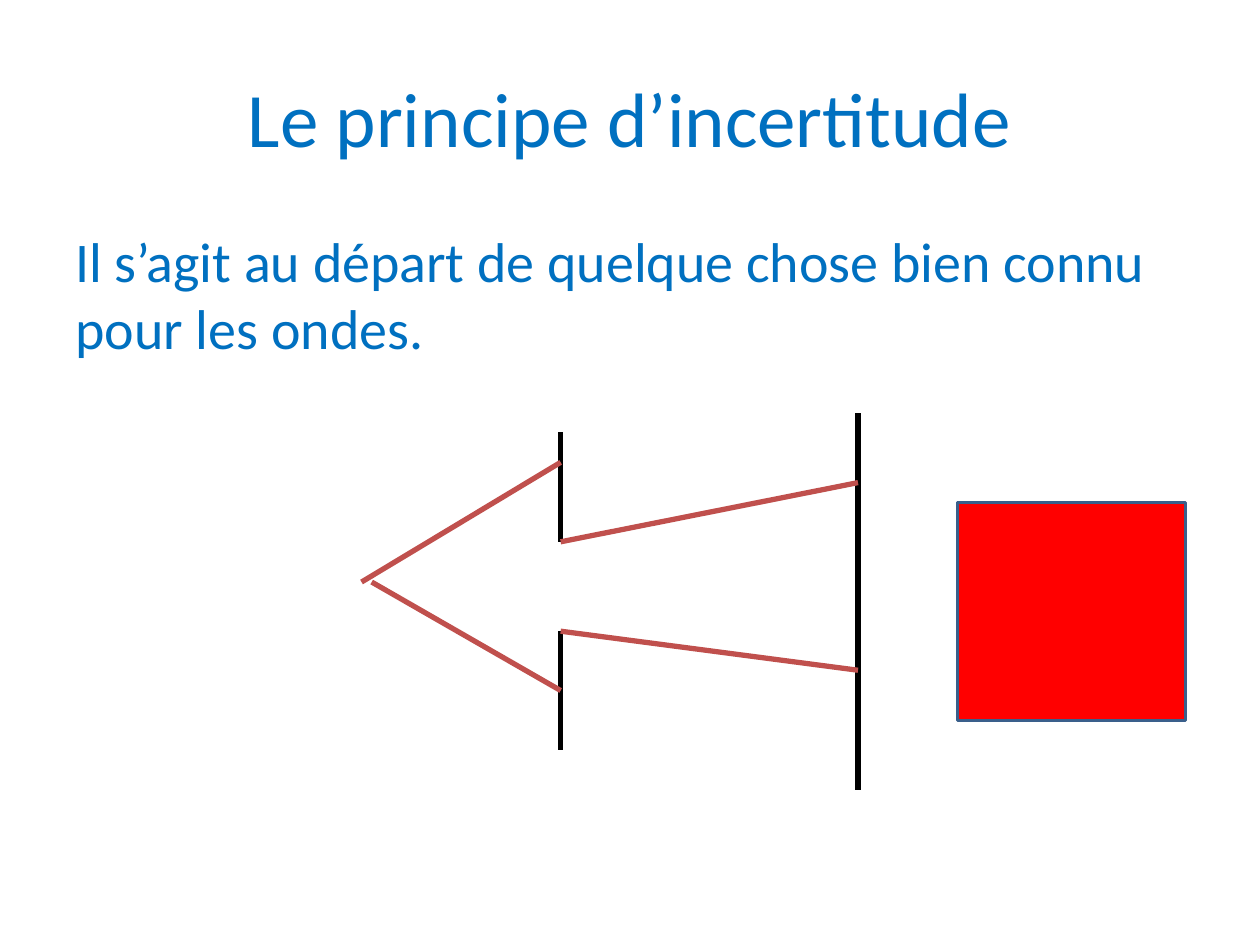
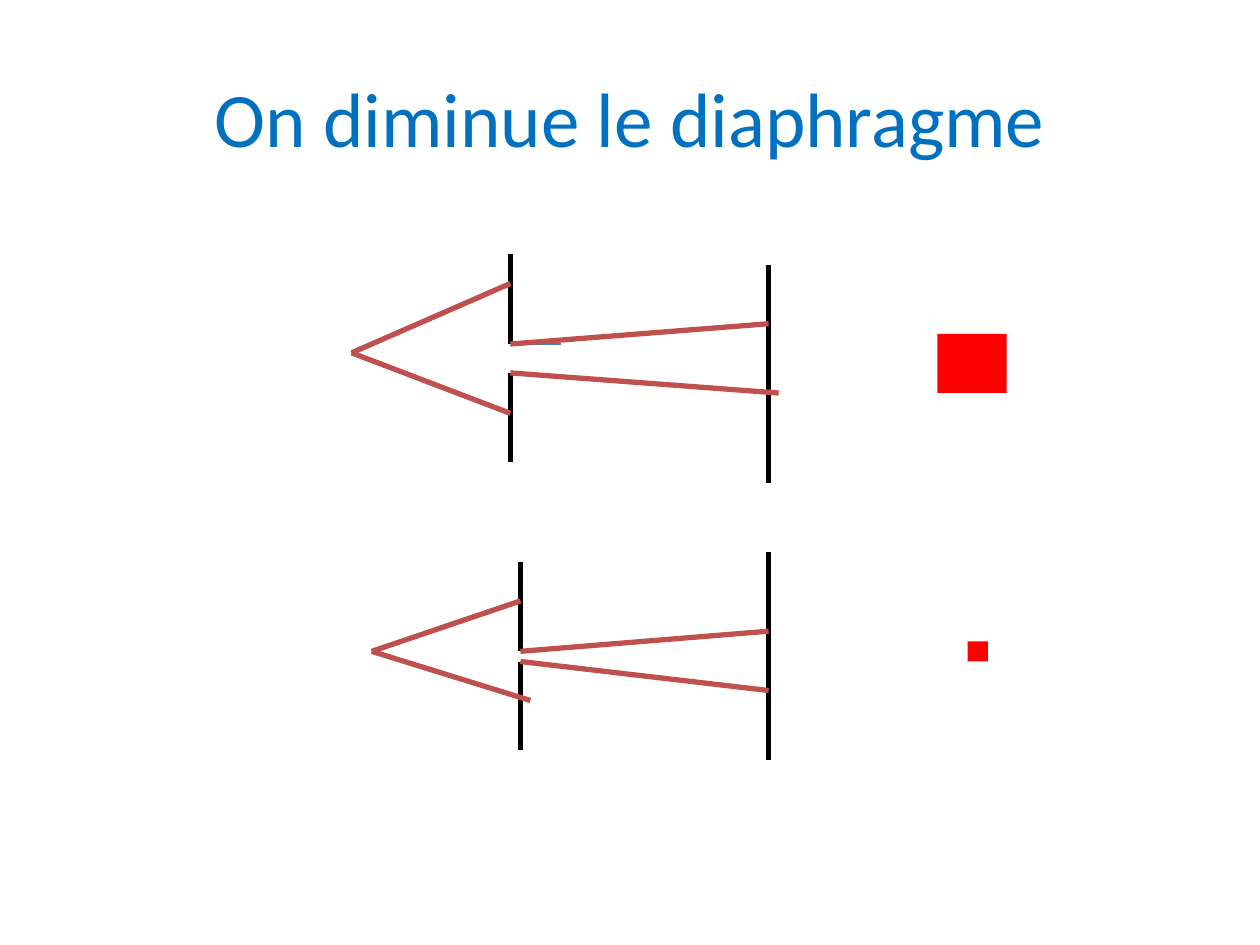
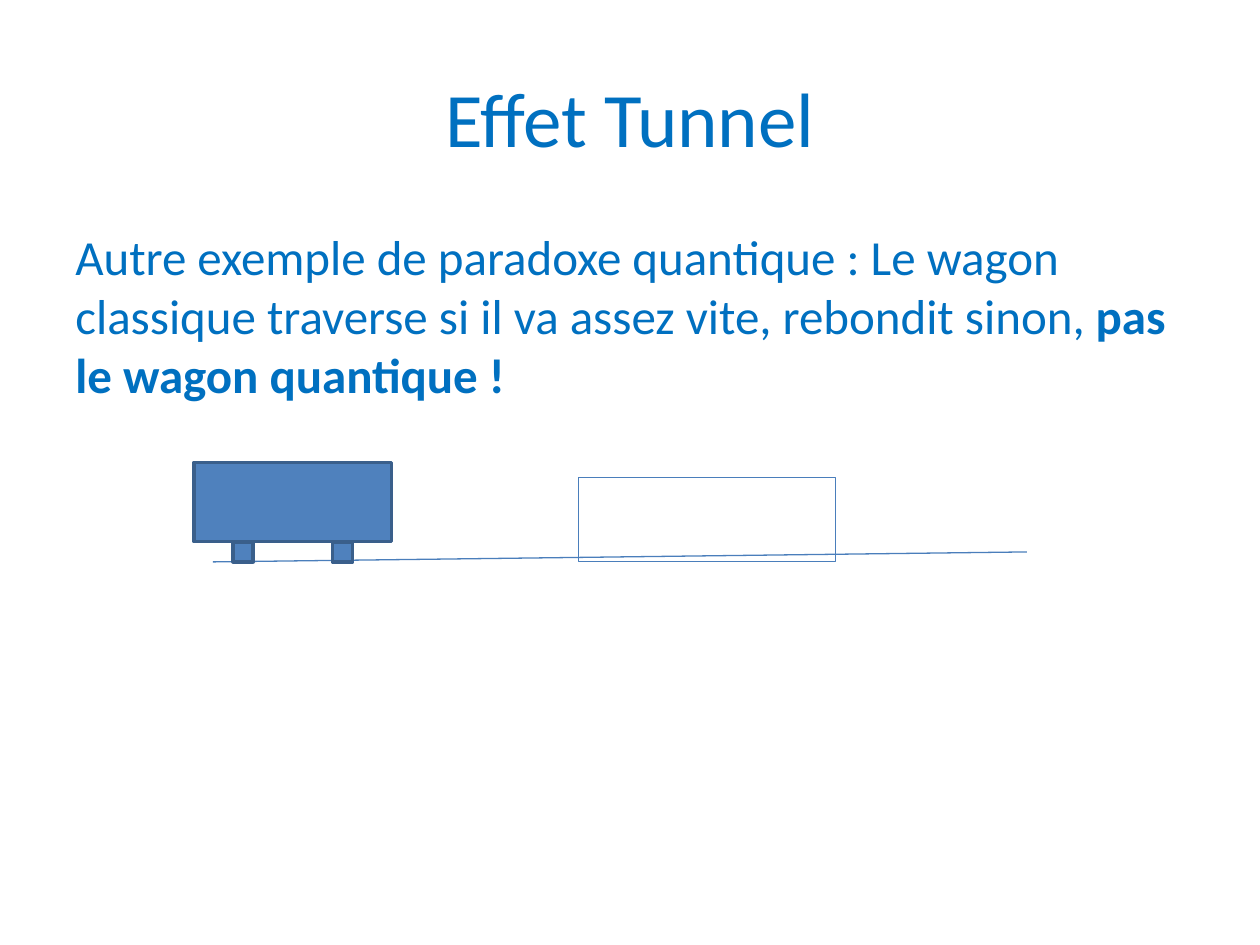
"""Build three slides on the uncertainty principle and the tunnel effect."""
from dataclasses import dataclass

from lxml import etree
from pptx import Presentation
from pptx.dml.color import RGBColor
from pptx.enum.shapes import MSO_CONNECTOR, MSO_SHAPE
from pptx.enum.text import MSO_ANCHOR, PP_ALIGN
from pptx.oxml.ns import qn
from pptx.util import Pt

STRAIGHT = MSO_CONNECTOR.STRAIGHT
RECTANGLE = MSO_SHAPE.RECTANGLE
MIDDLE, TOP = MSO_ANCHOR.MIDDLE, MSO_ANCHOR.TOP
CENTER, LEFT = PP_ALIGN.CENTER, PP_ALIGN.LEFT


@dataclass(frozen=True)
class Theme:
    """Shared colours, font and sizes."""
    font: str = "Calibri"
    title_size: int = 44
    text: RGBColor = RGBColor.from_string("0070C0")
    wall: RGBColor = RGBColor.from_string("000000")
    ray: RGBColor = RGBColor.from_string("C0504D")
    spot: RGBColor = RGBColor.from_string("FF0000")
    wagon: RGBColor = RGBColor.from_string("4F81BD")
    edge: RGBColor = RGBColor.from_string("3A5F8B")
    track: RGBColor = RGBColor.from_string("4A7EBB")
    thick: float = 3
    medium: float = 2
    thin: float = 0.75


theme = Theme()


def add_line(page, start, end, color, width):
    """Draw a straight line between two points."""
    line = page.shapes.add_connector(STRAIGHT, *map(Pt, start + end))
    line.line.color.rgb = color
    line.line.width = Pt(width)
    etree.SubElement(line._element.spPr, qn("a:effectLst"))


def add_rectangle(page, frame, fill=None, color=None, width=theme.medium):
    """Draw a rectangle with an optional fill and outline."""
    box = page.shapes.add_shape(RECTANGLE, *map(Pt, frame))
    box.shadow.inherit = False
    if fill is None:
        box.fill.background()
    else:
        box.fill.solid()
        box.fill.fore_color.rgb = fill
    if color is None:
        box.line.fill.background()
    else:
        box.line.color.rgb = color
        box.line.width = Pt(width)


deck = Presentation()
deck.slide_width, deck.slide_height = Pt(720), Pt(540)
blank = deck.slide_layouts[6]

contents = [
    ("Le principe d’incertitude", 32,
     ["Il s’agit au départ de quelque chose bien connu pour les ondes."]),
    ("On diminue le diaphragme", 0, []),
    ("Effet Tunnel", 28,
     ["Autre exemple de paradoxe quantique : Le wagon classique traverse "
      "si il va assez vite, rebondit sinon, ", "pas le wagon quantique !"]),
]

for title, body_size, body in contents:
    page = deck.slides.add_slide(blank)
    blocks = [([title], theme.title_size, 21.6, 90, MIDDLE, CENTER)]
    if body:
        blocks.append((body, body_size, 126, 356.4, TOP, LEFT))
    for spans, size, top, height, anchor, alignment in blocks:
        box = page.shapes.add_textbox(Pt(36), Pt(top), Pt(648), Pt(height))
        box.text_frame.word_wrap = True
        box.text_frame.vertical_anchor = anchor
        para = box.text_frame.paragraphs[0]
        para.alignment = alignment
        for index, words in enumerate(spans):
            span = para.add_run()
            span.text = words
            span.font.name = theme.font
            span.font.size = Pt(size)
            span.font.bold = index > 0
            span.font.color.rgb = theme.text

wide_page, narrow_page, tunnel_page = deck.slides

add_line(narrow_page, (303.1, 196.6), (320.4, 196.6), theme.track, theme.thin)

# page, slit x, slit wall heights, screen, incoming rays, outgoing ends, spot, spot outline
diagrams = [
    (wide_page, 320.4, (247, 309.6, 360.7, 428.4), (490.3, 236.2, 451.4),
     [((206.6, 332.6), (320.4, 264.2)), ((212.4, 332.6), (320.4, 394.6))],
     [(490.3, 275.8), (490.3, 383)], (547.2, 287.3, 130.3, 124.6), theme.edge),
    (narrow_page, 291.6, (145.4, 196.6, 213.1, 264.2), (439.2, 151.2, 275.8),
     [((200.9, 201.6), (291.6, 162)), ((200.9, 201.6), (291.6, 236.2))],
     [(439.2, 185), (445, 224.6)], (535.7, 190.8, 39.6, 33.8), None),
    (narrow_page, 297.4, (321.1, 372.2, 378, 428.4), (439.2, 315.4, 434.2),
     [((212.4, 372.2), (297.4, 343.4)), ((212.4, 372.2), (303.1, 400.3))],
     [(439.2, 360.7), (439.2, 394.6)], (553, 366.5, 11.5, 11.5), None),
]

for page, slit_x, heights, screen, incoming, ends, spot, outline in diagrams:
    wall_top, upper_edge, lower_edge, wall_bottom = heights
    screen_x, screen_top, screen_bottom = screen
    walls = [(slit_x, wall_top, upper_edge), (slit_x, lower_edge, wall_bottom),
             (screen_x, screen_top, screen_bottom)]
    for x, top, bottom in walls:
        add_line(page, (x, top), (x, bottom), theme.wall, theme.thick)
    outgoing = zip([(slit_x, upper_edge), (slit_x, lower_edge)], ends)
    for start, end in [*incoming, *outgoing]:
        add_line(page, start, end, theme.ray, theme.thick)
    add_rectangle(page, spot, theme.spot, outline)

add_line(tunnel_page, (121.7, 321.1), (586.8, 315.4), theme.track, theme.thin)
for wheel_left in (133.2, 190.1):
    add_rectangle(tunnel_page, (wheel_left, 309.6, 11.5, 11.5), theme.wagon, theme.edge)
add_rectangle(tunnel_page, (110.9, 264.2, 113, 45.4), theme.wagon, theme.edge)
add_rectangle(tunnel_page, (330.5, 272.9, 146.9, 48.2), None, theme.track, theme.thin)

deck.save("out.pptx")
